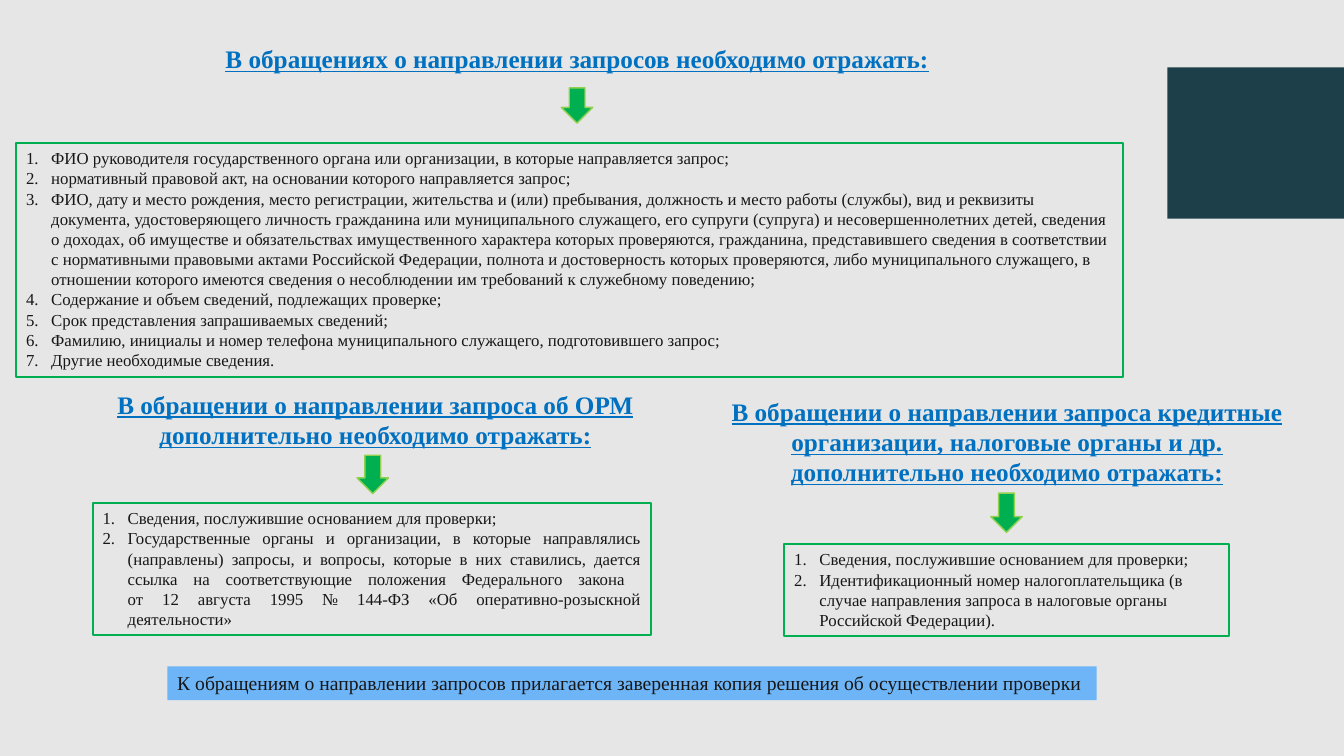
from dataclasses import dataclass

from lxml.etree import SubElement
from pptx import Presentation
from pptx.dml.color import RGBColor as RGB
from pptx.enum.shapes import MSO_SHAPE as SHAPE
from pptx.enum.text import MSO_ANCHOR as ANCHOR, MSO_AUTO_SIZE as AUTO, PP_ALIGN as ALIGN
from pptx.oxml.ns import qn
from pptx.util import Pt


@dataclass(frozen=True)
class Theme:
    font: str = "Times New Roman"
    background: RGB = RGB(0xE7, 0xE6, 0xE6)
    block: RGB = RGB(0x1D, 0x3F, 0x4A)
    heading: RGB = RGB(0x00, 0x70, 0xC0)
    text: RGB = RGB(0x18, 0x17, 0x17)
    green: RGB = RGB(0x00, 0xB0, 0x50)
    lime: RGB = RGB(0x92, 0xD0, 0x50)
    banner: RGB = RGB(0x6D, 0xB5, 0xF7)
    heading_size: int = 18
    list_size: int = 12
    banner_size: int = 14


T = Theme()


def write(sp, *lines, size=T.list_size, color=T.text, heading=False, align=ALIGN.LEFT, numbered=False):
    """Fill a shape with one paragraph per line; a newline inside a line is a line break."""
    tf = sp.text_frame
    tf.word_wrap = True
    tf.auto_size = AUTO.SHAPE_TO_FIT_TEXT
    tf.vertical_anchor = ANCHOR.TOP
    for i, line in enumerate(lines):
        p = tf.add_paragraph() if i else tf.paragraphs[0]
        p.text = line
        p.alignment = align
        if numbered:
            pPr = p._p.get_or_add_pPr()
            pPr.set("marL", str(Pt(18)))
            pPr.set("indent", str(-Pt(18)))
            SubElement(pPr, qn("a:buAutoNum"), type="arabicPeriod")
        for r in p.runs:
            r.font.name = T.font
            r.font.size = Pt(size)
            r.font.color.rgb = color
            r.font.bold = r.font.underline = heading


prs = Presentation()
prs.slide_width, prs.slide_height = Pt(960), Pt(540)
s = prs.slides.add_slide(prs.slide_layouts[5])
s.background.fill.solid()
s.background.fill.fore_color.rgb = T.background

# Corner block and bottom banner
bars = []
for x, y, w, h, color in [(833.8, 48.2, 126.2, 108, T.block), (119.5, 476, 663.8, 24.2, T.banner)]:
    sp = s.shapes.add_shape(SHAPE.RECTANGLE, Pt(x), Pt(y), Pt(w), Pt(h))
    sp.shadow.inherit = False
    sp.fill.solid()
    sp.fill.fore_color.rgb = color
    sp.line.fill.background()
    bars.append(sp)
write(bars[1], "К обращениям о направлении запросов прилагается заверенная копия решения об осуществлении проверки",
      size=T.banner_size)

# Headings
title = s.shapes.title
for sp, (x, y, w, h), text in [
    (title, (136.8, 27.4, 550.8, 29.1), "В обращениях о направлении запросов необходимо отражать:"),
    (None, (28.1, 274.3, 480.2, 50.9),
     "В обращении о направлении запроса об ОРМ дополнительно необходимо отражать:"),
    (None, (504.7, 279.4, 429.1, 72.7),
     "В обращении о направлении запроса кредитные организации, налоговые органы и др. "
     "дополнительно необходимо отражать:"),
]:
    sp = sp or s.shapes.add_textbox(0, 0, 0, 0)
    sp.left, sp.top, sp.width, sp.height = Pt(x), Pt(y), Pt(w), Pt(h)
    write(sp, text, size=T.heading_size, color=T.heading, heading=True, align=ALIGN.CENTER)

# Numbered lists in green frames
basis = "Сведения, послужившие основанием для проверки;"
for (x, y, w, h), align, items in [
    ((11.5, 102.2, 790.6, 167), ALIGN.LEFT, [
        "ФИО руководителя государственного органа или организации, в которые направляется запрос;",
        "нормативный правовой акт, на основании которого направляется запрос;",
        "ФИО, дату и место рождения, место регистрации, жительства и (или) пребывания, должность и место "
        "работы (службы), вид и реквизиты документа, удостоверяющего личность гражданина или муниципального "
        "служащего, его супруги (супруга) и несовершеннолетних детей, сведения о доходах, об имуществе и "
        "обязательствах имущественного характера которых проверяются, гражданина, представившего сведения в "
        "соответствии с нормативными правовыми актами Российской Федерации, полнота и достоверность которых "
        "проверяются, либо муниципального служащего, в отношении которого имеются сведения о несоблюдении им "
        "требований к служебному поведению;",
        "Содержание и объем сведений, подлежащих проверке;",
        "Срок представления запрашиваемых сведений;",
        "Фамилию, инициалы и номер телефона муниципального служащего, подготовившего запрос;",
        "Другие необходимые сведения.",
    ]),
    ((66.2, 359.3, 398.9, 94.5), ALIGN.JUSTIFY, [
        basis,
        "Государственные органы и организации, в которые направлялись (направлены) запросы, и вопросы, которые "
        "в них ставились, дается ссылка на соответствующие положения Федерального закона \n"
        "от 12 августа 1995 № 144-ФЗ «Об оперативно-розыскной деятельности»",
    ]),
    ((560.2, 388.7, 317.5, 65.4), ALIGN.LEFT, [
        basis,
        "Идентификационный номер налогоплательщика (в случае направления запроса в налоговые органы "
        "Российской Федерации).",
    ]),
]:
    sp = s.shapes.add_textbox(Pt(x), Pt(y), Pt(w), Pt(h))
    sp.line.color.rgb = T.green
    sp.line.width = Pt(1.5)
    write(sp, *items, align=align, numbered=True)

# Arrows from each heading down to its list
for x, y, length in [(399.6, 64.1, 25.2), (252.6, 327.6, 27.4), (704.9, 355, 28.1)]:
    sp = s.shapes.add_shape(SHAPE.RIGHT_ARROW, Pt(x), Pt(y), Pt(length), Pt(22.5))
    sp.rotation = 90
    sp.shadow.inherit = False
    sp.fill.solid()
    sp.fill.fore_color.rgb = T.green
    sp.line.color.rgb = T.lime
    sp.line.width = Pt(1)

prs.save("out.pptx")
